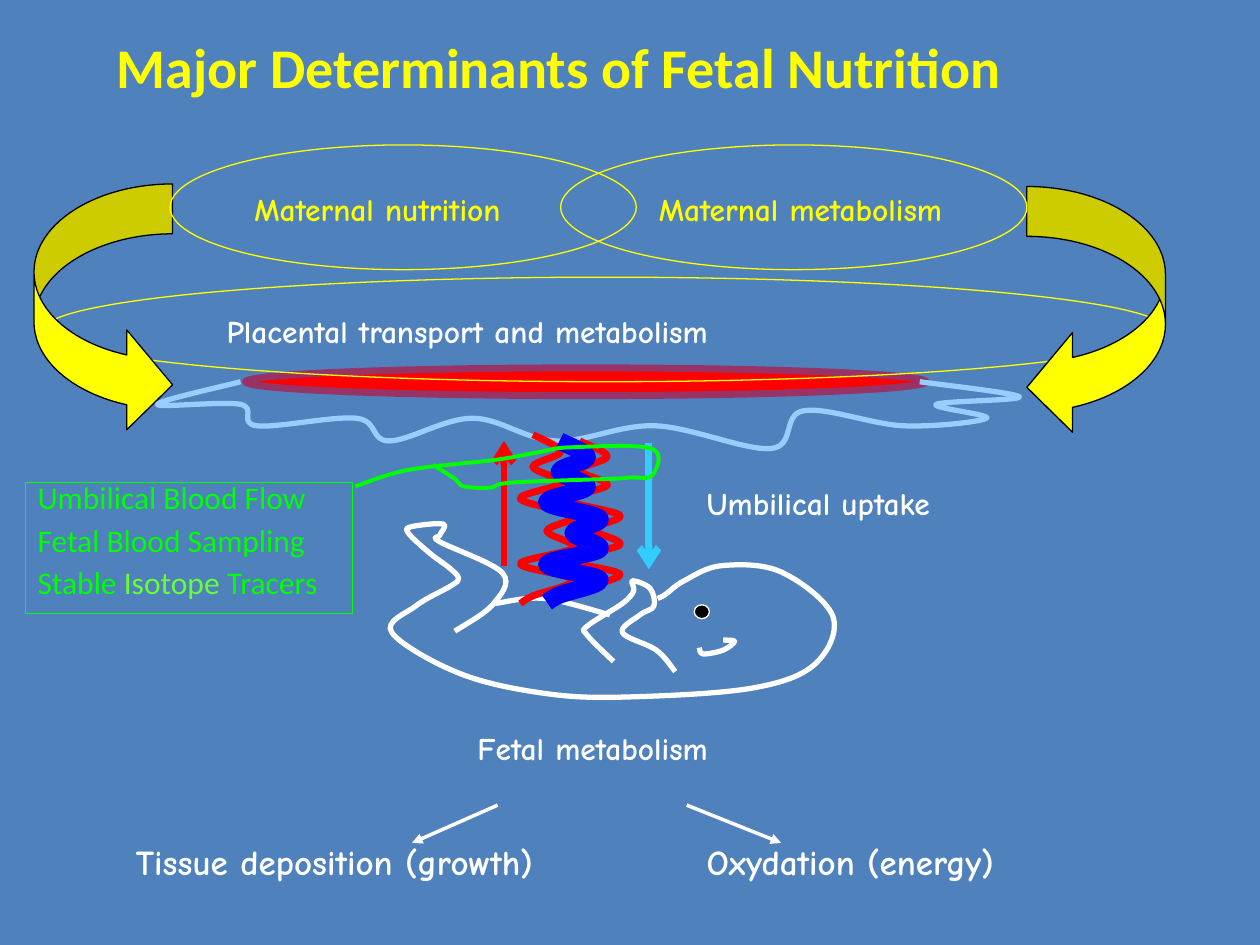
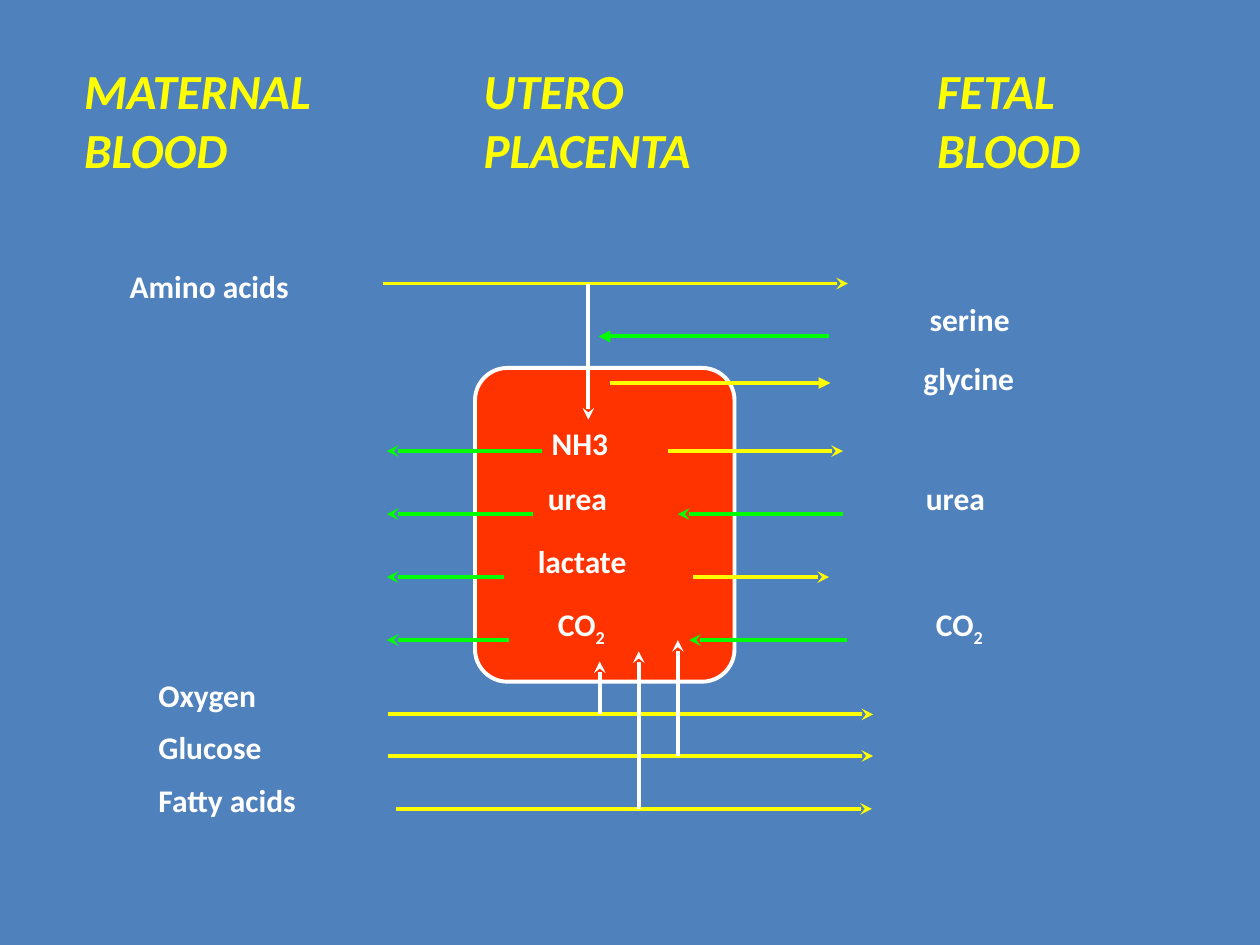
"""Build two slides on fetal nutrition and placental exchange."""
from lxml.etree import SubElement
from pptx import Presentation
from pptx.dml.color import RGBColor
from pptx.enum.shapes import MSO_CONNECTOR as LINK, MSO_SHAPE as KIND
from pptx.enum.text import MSO_ANCHOR as ANCHOR, PP_ALIGN as ALIGN
from pptx.oxml.ns import qn
from pptx.util import Inches, Pt

HUES = {
    "back": "4F81BD", "yellow": "FFFF00", "white": "FFFFFF", "black": "000000",
    "red": "FF0000", "plum": "993366", "pale": "99CCFF", "sky": "33CCFF",
    "blue": "0000FF", "green": "00FF00", "lime": "66FF33", "orange": "FF3300",
}
SANS, COMIC = "Calibri", "Comic Neue"

TITLE = "Major Determinants of Fetal Nutrition"
METHODS = ["Umbilical Blood Flow", "Fetal Blood Sampling", "Stable |Isotope| Tracers"]
LABELS = [
    ("Maternal nutrition", 1.92, 1.46, 2.4, 18, "yellow"),
    ("Maternal metabolism", 5.13, 1.46, 2.71, 18, "yellow"),
    ("Placental transport and metabolism", 1.7, 2.43, 5.87, 18, "white"),
    ("Umbilical uptake", 5.51, 3.79, 2.18, 18, "white"),
    ("Fetal metabolism", 3.69, 5.74, 2.25, 18, "white"),
    ("Tissue deposition (growth)", 0.98, 6.62, 3.72, 20, "white"),
    ("Oxydation (energy)", 5.51, 6.62, 2.77, 20, "white"),
]
FLOWS = [
    ((5.15, 3.52), (5.15, 4.52), "sky", 4, "arrow"),
    ((4, 4.49), (4, 3.5), "red", 4, "arrow"),
    ((3.95, 6.39), (3.27, 6.69), "white", 2, "triangle"),
    ((5.45, 6.39), (6.2, 6.69), "white", 2, "triangle"),
]
SAC = [
    (1.91, 3.03), (1.25, 3.21), (1.91, 3.21), (2.04, 3.38), (2.83, 3.32),
    (3.09, 3.5), (3.75, 3.32), (4.41, 3.5), (5.2, 3.38), (6.12, 3.56),
    (6.38, 3.26), (7.17, 3.38), (7.83, 3.32), (7.43, 3.21), (8.09, 3.15),
    (7.3, 3.03),
]
BODY = [
    (5.22, 4.75), (5.28, 4.72), (5.43, 4.61), (5.73, 4.49), (6.2, 4.54),
    (6.61, 4.89), (6.47, 5.27), (5.98, 5.46), (5.05, 5.53), (4.37, 5.51),
    (3.66, 5.35), (3.11, 5.02), (3.3, 4.81), (3.58, 4.65), (3.64, 4.59),
    (3.57, 4.51), (3.41, 4.39), (3.24, 4.23), (3.27, 4.18), (3.52, 4.16),
    (3.49, 4.25), (3.49, 4.3), (3.99, 4.55), (3.91, 4.8), (3.61, 5.01),
]
BELLY = [(3.93, 4.79), (4.32, 4.75), (4.84, 4.88)]
ARM = [
    (4.87, 5.25), (4.66, 5.04), (4.66, 4.97), (4.94, 4.79), (5.03, 4.69),
    (5.02, 4.61), (5.16, 4.67), (5.19, 4.81), (5.08, 4.88), (4.94, 5.02),
    (5.21, 5.16), (5.36, 5.33),
]
MOUTH = [(5.74, 5.08), (5.83, 5.09), (5.74, 5.16), (5.58, 5.19), (5.55, 5.14)]
LASSO = [
    (2.82, 3.86), (3.24, 3.73), (3.93, 3.65), (4.27, 3.59), (4.53, 3.55),
    (5.17, 3.56), (5.18, 3.77), (5, 3.79), (4.85, 3.8), (4.06, 3.83),
    (3.89, 3.87), (3.68, 3.86), (3.61, 3.8), (3.44, 3.69),
]
COIL = [
    (0.12, 0), (0.34, 0.1), (0.12, 0.19), (0.34, 0.285), (0.02, 0.38),
    (0.44, 0.48), (0.23, 0.57), (0.44, 0.67), (0.02, 0.765), (0.44, 0.86),
    (0.12, 0.955), (0.02, 1),
]
CORDS = [
    (4.11, 3.45, 1.34, "red", 4),
    (4.48, 3.5, 1.23, "red", 4),
    (4.32, 3.5, 1.28, "blue", 10),
]

HEADS = [
    (["MATERNAL", "BLOOD"], 0.57, 2.34),
    (["UTERO", "PLACENTA"], 3.74, 2.23),
    (["FETAL", "BLOOD"], 7.34, 1.54),
]
TERMS = [
    ("Amino acids", 0.93, 2.07), ("Oxygen", 1.16, 5.32), ("Glucose", 1.16, 5.73),
    ("Fatty acids", 1.16, 6.15), ("NH3", 4.28, 3.32), ("urea", 4.25, 3.75),
    ("lactate", 4.17, 4.25), ("CO|2", 4.33, 4.75), ("serine", 7.28, 2.33),
    ("glycine", 7.23, 2.8), ("urea", 7.25, 3.75), ("CO|2", 7.33, 4.75),
]
EXITS = [
    (4.3, 5.3, 6.69, "yellow"), (4.23, 6.69, 5.38, "green"),
    (4, 5.5, 6.58, "yellow"), (4.04, 6.72, 5.47, "green"),
]
ROW, STEP = 3.58, 0.5
ACROSS = [
    (3.04, 6.73, 2.25, "yellow", "stealth"),
    (3.08, 6.93, 5.67, "yellow", "stealth"),
    (3.08, 6.93, 6, "yellow", "stealth"),
    (3.14, 6.92, 6.42, "yellow", "stealth"),
    (6.58, 4.75, 2.67, "green", "triangle"),
    (4.84, 6.59, 3.04, "yellow", "triangle"),
]
UPTAKE = [(4.67, 2.25, 3.33), (4.76, 5.67, 5.25), (5.07, 6.42, 5.17), (5.38, 6, 5.08)]


def hue(name):
    return RGBColor.from_string(HUES[name])


def paint(item, fill, line, width):
    item.shadow.inherit = False
    if fill:
        item.fill.solid()
        item.fill.fore_color.rgb = hue(fill)
    else:
        item.fill.background()
    item.line.color.rgb = hue(line)
    item.line.width = Pt(width)


def shape(slide, kind, box, fill, line, width=0.75, adjust=()):
    item = slide.shapes.add_shape(kind, *map(Inches, box))
    for i, value in enumerate(adjust):
        item.adjustments[i] = value
    paint(item, fill, line, width)
    return item


def smooth(item):
    trace = item._element.spPr.find(".//" + qn("a:path"))
    dots = [(int(dot.get("x")), int(dot.get("y"))) for dot in trace.iter(qn("a:pt"))]
    ends = [dots[0], *dots, dots[-1]]
    for i, bend in enumerate(trace.findall(qn("a:lnTo"))):
        a, b, c, d = ends[i:i + 4]
        bend.tag = qn("a:cubicBezTo")
        for base, near, far in ((b, c, a), (c, b, d)):
            x, y = (round(p + (q - r) / 6) for p, q, r in zip(base, near, far))
            SubElement(bend, qn("a:pt"), x=str(x), y=str(y))
        bend.append(bend[0])


def curve(slide, nodes, line, width):
    pen = slide.shapes.build_freeform(*map(Inches, nodes[0]))
    pen.add_line_segments([(Inches(x), Inches(y)) for x, y in nodes[1:]], close=False)
    item = pen.convert_to_shape()
    smooth(item)
    paint(item, None, line, width)


def arrow(slide, start, end, color, width=2.25, head="stealth"):
    link = slide.shapes.add_connector(LINK.STRAIGHT, *map(Inches, (*start, *end)))
    link.line.color.rgb = hue(color)
    link.line.width = Pt(width)
    props = link._element.spPr
    SubElement(props.find(qn("a:ln")), qn("a:tailEnd"), type=head)
    SubElement(props, qn("a:effectLst"))


def write(item, lines, size, color, font=SANS, bold=True, italic=False):
    frame = item.text_frame
    frame.word_wrap = True
    frame.vertical_anchor = ANCHOR.TOP
    for i, line in enumerate(lines):
        para = frame.add_paragraph() if i else frame.paragraphs[0]
        para.alignment = ALIGN.LEFT
        for part in line.split("|"):
            run = para.add_run()
            run.text = part
            face = run.font
            face.name, face.size = font, Pt(size)
            face.bold, face.italic = bold, italic
            face.color.rgb = hue(color)
    return frame.paragraphs


def label(slide, lines, box, *style, **more):
    return write(slide.shapes.add_textbox(*map(Inches, box)), lines, *style, **more)


def page(deck):
    slide = deck.slides.add_slide(deck.slide_layouts[6])
    slide.background.fill.solid()
    slide.background.fill.fore_color.rgb = hue("back")
    return slide


def nutrition(slide):
    shape(slide, KIND.OVAL, (1.95, 2.92, 5.4, 0.22), "red", "plum", 4)
    curve(slide, SAC, "pale", 3)
    for nodes in (BODY, BELLY, ARM, MOUTH):
        curve(slide, nodes, "white", 3)
    shape(slide, KIND.OVAL, (5.51, 4.8, 0.12, 0.11), "black", "white")
    for left, top, tall, color, width in CORDS:
        curve(slide, [(left + x, top + y * tall) for x, y in COIL], color, width)
    for flow in FLOWS:
        arrow(slide, *flow)
    for text, left, top, wide, size, color in LABELS:
        label(slide, [text], (left, top, wide, 0.4), size, color, COMIC)
    shape(slide, KIND.OVAL, (0.35, 2.2, 8.9, 0.83), None, "yellow")
    for kind, left, top in ((KIND.CURVED_RIGHT_ARROW, 0.27, 1.46),
                            (KIND.CURVED_LEFT_ARROW, 8.15, 1.48)):
        shape(slide, kind, (left, top, 1.1, 1.99), "yellow", "black",
              adjust=(0.36, 0.72, 0.33))
    for left in (1.35, 4.45):
        shape(slide, KIND.OVAL, (left, 1.15, 3.7, 0.99), None, "yellow")
    label(slide, [TITLE], (0.83, 0.21, 7.88, 0.63), 32, "yellow")
    panel = shape(slide, KIND.RECTANGLE, (0.2, 3.83, 2.6, 1.04), None, "green")
    paras = write(panel, METHODS, 18, "green", bold=False)
    for i, para in enumerate(paras):
        para.line_spacing = 0.7
        para.space_before = Pt(9 if i else 0)
    paras[2].runs[1].font.color.rgb = hue("lime")
    curve(slide, LASSO, "green", 2.25)


def exchange(slide):
    shape(slide, KIND.ROUNDED_RECTANGLE, (3.77, 2.92, 2.06, 2.49),
          "orange", "white", 2.25, (0.125,))
    for lines, left, wide in HEADS:
        label(slide, lines, (left, 0.43, wide, 1.03), 28, "yellow", italic=True)
    for text, left, top in TERMS:
        runs = label(slide, [text], (left, top, 1.8, 0.5), 18, "white")[0].runs
        for run in runs[1:]:
            run.font._element.set("baseline", "-25000")
    for i, (inner, start, end, color) in enumerate(EXITS):
        y = ROW + i * STEP
        arrow(slide, (inner, y), (3.07, y), "green")
        arrow(slide, (start, y), (end, y), color)
    for start, end, y, color, head in ACROSS:
        arrow(slide, (start, y), (end, y), color, head=head)
    for x, start, end in UPTAKE:
        arrow(slide, (x, start), (x, end), "white")


def main():
    deck = Presentation()
    deck.slide_width, deck.slide_height = Inches(10), Inches(7.5)
    for draw in (nutrition, exchange):
        draw(page(deck))
    deck.save("out.pptx")


if __name__ == "__main__":
    main()
